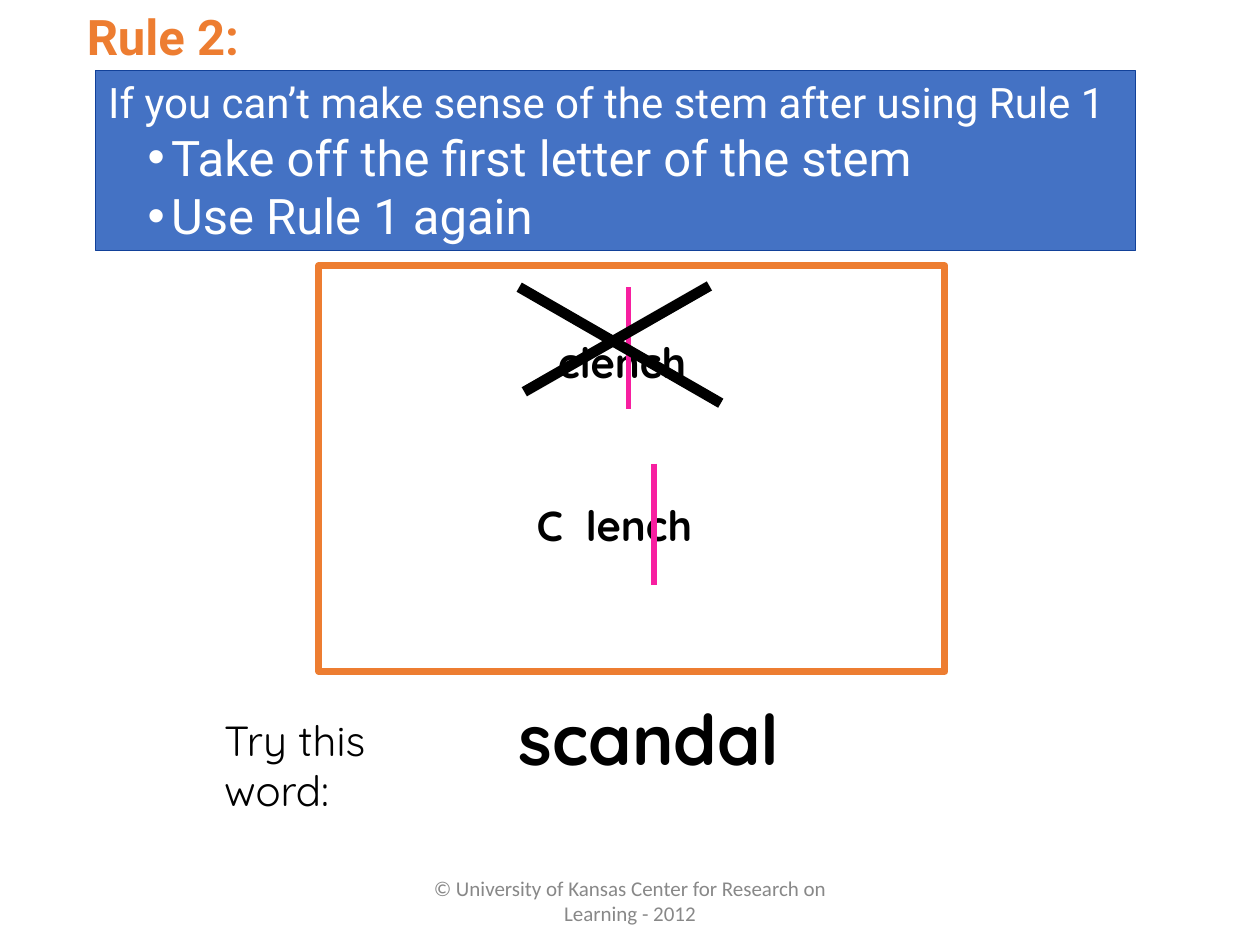
from lxml.etree import SubElement
from pptx import Presentation
from pptx.dml.color import RGBColor
from pptx.enum.shapes import MSO_CONNECTOR, MSO_SHAPE
from pptx.enum.text import MSO_ANCHOR, PP_ALIGN
from pptx.oxml.ns import qn
from pptx.util import Pt

WHITE = RGBColor(0xFF, 0xFF, 0xFF)
BLACK = RGBColor(0x00, 0x00, 0x00)
BLUE = RGBColor(0x44, 0x72, 0xC4)
NAVY = RGBColor(0x12, 0x41, 0x99)
ORANGE = RGBColor(0xED, 0x7D, 0x31)
PINK = RGBColor(0xF7, 0x1F, 0xA0)
GRAY = RGBColor(0x88, 0x88, 0x88)


def style_para(para, size, name, color, bold=False):
    for span in para.runs:
        span.font.size = Pt(size)
        span.font.name = name
        span.font.color.rgb = color
        span.font.bold = bold


def add_text(slide, box, text, size, name, color, bold=False):
    left, top, width, height = box
    label = slide.shapes.add_textbox(Pt(left), Pt(top), Pt(width), Pt(height))
    label.text_frame.word_wrap = True
    para = label.text_frame.paragraphs[0]
    para.text = text
    style_para(para, size, name, color, bold)
    return label


def add_rectangle(slide, box, line_color, line_width):
    left, top, width, height = box
    rectangle = slide.shapes.add_shape(
        MSO_SHAPE.RECTANGLE, Pt(left), Pt(top), Pt(width), Pt(height))
    rectangle.shadow.inherit = False
    rectangle.fill.background()
    rectangle.line.color.rgb = line_color
    rectangle.line.width = Pt(line_width)
    return rectangle


def add_line(slide, start, end, color, width):
    line = slide.shapes.add_connector(
        MSO_CONNECTOR.STRAIGHT, *(Pt(value) for value in start + end))
    line.line.color.rgb = color
    line.line.width = Pt(width)
    SubElement(line._element.spPr, qn("a:effectLst"))


def make_bullet(para):
    para.level = 1
    properties = para._p.get_or_add_pPr()
    properties.set("marL", str(Pt(36)))
    properties.set("indent", str(Pt(-13.5)))
    color = SubElement(properties, qn("a:buClr"))
    SubElement(color, qn("a:srgbClr"), val=str(WHITE))
    SubElement(properties, qn("a:buFont"), typeface="Arial")
    SubElement(properties, qn("a:buChar"), char="•")


def add_tab_stop(para, position):
    stops = SubElement(para._p.get_or_add_pPr(), qn("a:tabLst"))
    SubElement(stops, qn("a:tab"), pos=str(Pt(position)), algn="l")


def add_rule(slide, box):
    left, top, width, height = box
    panel = add_rectangle(slide, box, NAVY, 0.75)
    panel.fill.solid()
    panel.fill.fore_color.rgb = BLUE
    frame = panel.text_frame
    frame.word_wrap = True
    frame.vertical_anchor = MSO_ANCHOR.TOP
    frame.text = "\n".join([
        "If you can’t make sense of the stem after using Rule 1",
        "Take off the first letter of the stem",
        "Use Rule 1 again",
    ])
    intro, *steps = frame.paragraphs
    for para in steps:
        make_bullet(para)
        style_para(para, 28, "Roboto", WHITE)
    style_para(intro, 24, "Roboto", WHITE)
    for para in frame.paragraphs:
        para.alignment = PP_ALIGN.LEFT
    add_text(slide, (left - 12.2, top - 40.3, 140, 41),
             "Rule 2:", 28, "Roboto", ORANGE, True)


def add_example(slide, box):
    left, top, width, height = box
    add_rectangle(slide, box, ORANGE, 4)
    add_text(slide, (left + 129.6, top + 36.7, 175.7, 36),
             "clench", 24, "Quicksand", BLACK, True)
    split_word = add_text(slide, (left + 117.4, top + 130.3, 175.7, 36),
                          "C\tlench", 24, "Quicksand", BLACK, True)
    add_tab_stop(split_word.text_frame.paragraphs[0], 28)
    for x, y in [(191.5, 113), (177.1, 12.2)]:
        add_line(slide, (left + x, top + y), (left + x, top + y + 69.5), PINK, 3)
    for x1, y1, x2, y2 in [(114.5, 12.2, 229.7, 78.5), (117.4, 72, 223.2, 11.5)]:
        add_line(slide, (left + x1, top + y1), (left + x2, top + y2), BLACK, 6)


def add_practice(slide, box):
    left, top, width, height = box
    add_text(slide, (left + 168.5, top, width - 168.5, height),
             "scandal", 40, "Quicksand", BLACK, True)
    add_text(slide, (left, top + 10.8, 148.3, 36),
             "Try this word:", 24, "Quicksand", BLACK)


def add_footer(slide, box):
    label = add_text(slide, box,
                     "© University of Kansas Center for Research on Learning - 2012",
                     12, "Calibri", GRAY)
    label.text_frame.vertical_anchor = MSO_ANCHOR.MIDDLE
    label.text_frame.paragraphs[0].alignment = PP_ALIGN.CENTER


def main():
    deck = Presentation()
    deck.slide_width, deck.slide_height = Pt(720), Pt(540)
    slide = deck.slides.add_slide(deck.slide_layouts[6])
    add_rule(slide, (54.7, 40.3, 594, 103))
    add_example(slide, (182.2, 151.9, 357.8, 231.8))
    add_practice(slide, (121, 393.8, 401, 55.4))
    add_footer(slide, (238.3, 500.4, 243.4, 28.8))
    deck.save("out.pptx")


if __name__ == "__main__":
    main()
